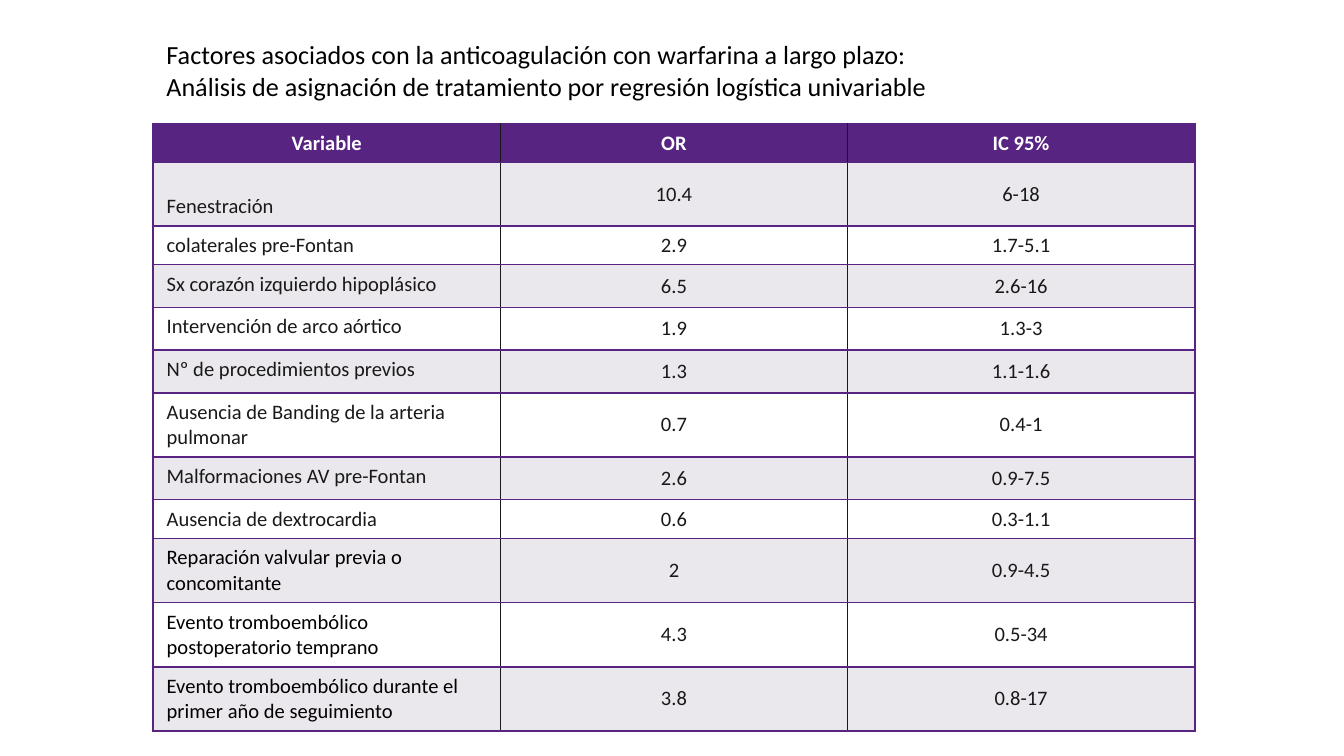
import pptx
import pptx.dml.color
import pptx.enum.text
import pptx.oxml.ns
import pptx.util
from lxml import etree

Pt = pptx.util.Pt
RGBColor = pptx.dml.color.RGBColor
ALIGN = pptx.enum.text.PP_ALIGN
ANCHOR = pptx.enum.text.MSO_ANCHOR

PURPLE = RGBColor(0x58, 0x24, 0x81)
LILAC = RGBColor(0xEA, 0xE8, 0xED)
WHITE = RGBColor(0xFF, 0xFF, 0xFF)
INK = RGBColor(0x19, 0x19, 0x19)
BLACK = RGBColor(0x00, 0x00, 0x00)

TITLE_FORMAT = {"name": "Calibri", "size": Pt(14), "color": BLACK}
HEADER_FORMAT = {"name": "Calibri", "size": Pt(11), "bold": True, "color": WHITE}
BODY_FORMAT = {"name": "Calibri", "size": Pt(11), "bold": False, "color": INK}
EVENT_FORMAT = {**BODY_FORMAT, "color": BLACK}

TITLE = [
    "Factores asociados con la anticoagulación con warfarina a largo plazo:",
    "Análisis de asignación de tratamiento por regresión logística univariable",
]
LEFT = 82.1
COLUMN_WIDTH = 186
TIGHT, NORMAL, TALL = 20.5, 22.9, 33.9
HEADER = ["Variable", "OR", "IC 95%"]

# Row height, format of the variable name, then the three cell texts
FACTORS = [
    (TALL, BODY_FORMAT, "Fenestración", "10.4", "6-18"),
    (TIGHT, BODY_FORMAT, "colaterales pre-Fontan", "2.9", "1.7-5.1"),
    (NORMAL, BODY_FORMAT, "Sx corazón izquierdo hipoplásico", "6.5", "2.6-16"),
    (NORMAL, BODY_FORMAT, "Intervención de arco aórtico", "1.9", "1.3-3"),
    (NORMAL, BODY_FORMAT, "Nº de procedimientos previos", "1.3", "1.1-1.6"),
    (TALL, BODY_FORMAT, "Ausencia de Banding de la arteria pulmonar", "0.7", "0.4-1"),
    (NORMAL, BODY_FORMAT, "Malformaciones AV pre-Fontan", "2.6", "0.9-7.5"),
    (TIGHT, BODY_FORMAT, "Ausencia de dextrocardia", "0.6", "0.3-1.1"),
    (TALL, EVENT_FORMAT, "Reparación valvular previa o concomitante", "2", "0.9-4.5"),
    (TALL, EVENT_FORMAT, "Evento tromboembólico postoperatorio temprano", "4.3", "0.5-34"),
    (TALL, EVENT_FORMAT, "Evento tromboembólico durante el primer año de seguimiento",
     "3.8", "0.8-17"),
]


def write(para, text, formats):
    span = para.add_run()
    span.text = text
    for name, value in formats.items():
        if name == "color":
            span.font.color.rgb = value
        else:
            setattr(span.font, name, value)


def add_title(page):
    box = page.shapes.add_textbox(Pt(LEFT), Pt(17.3), Pt(590), Pt(41))
    frame = box.text_frame
    frame.word_wrap = True
    frame.auto_size = pptx.enum.text.MSO_AUTO_SIZE.SHAPE_TO_FIT_TEXT
    for index, line in enumerate(TITLE):
        para = frame.paragraphs[0] if index == 0 else frame.add_paragraph()
        write(para, line, TITLE_FORMAT)


def set_borders(cell, column):
    """Purple rules around the table and between rows, dark ones between columns."""
    colors = {
        "lnL": PURPLE if column == 0 else INK,
        "lnR": PURPLE if column == len(HEADER) - 1 else INK,
        "lnT": PURPLE,
        "lnB": PURPLE,
    }
    qn = pptx.oxml.ns.qn
    properties = cell._tc.get_or_add_tcPr()
    for side, color in colors.items():
        line = etree.SubElement(properties, qn("a:" + side), w=str(Pt(1)))
        fill = etree.SubElement(line, qn("a:solidFill"))
        etree.SubElement(fill, qn("a:srgbClr"), val=str(color))


def fill_cell(cell, column, text, formats, color, align, anchor):
    set_borders(cell, column)
    cell.fill.solid()
    cell.fill.fore_color.rgb = color
    cell.vertical_anchor = anchor
    para = cell.text_frame.paragraphs[0]
    para.alignment = align
    write(para, text, formats)


def add_factor_table(page):
    heights = [TIGHT] + [factor[0] for factor in FACTORS]
    table = page.shapes.add_table(
        len(heights), len(HEADER), Pt(LEFT), Pt(66.3),
        Pt(COLUMN_WIDTH * len(HEADER)), Pt(sum(heights))).table
    for column in table.columns:
        column.width = Pt(COLUMN_WIDTH)
    for row, height in zip(table.rows, heights):
        row.height = Pt(height)

    # Header row
    for column, text in enumerate(HEADER):
        fill_cell(table.cell(0, column), column, text, HEADER_FORMAT,
                  PURPLE, ALIGN.CENTER, ANCHOR.MIDDLE)

    # Factor rows, in alternating bands
    for row, (_, name_format, name, *values) in enumerate(FACTORS, start=1):
        color = LILAC if row % 2 else WHITE
        name_anchor = ANCHOR.BOTTOM if row == 1 else ANCHOR.TOP
        fill_cell(table.cell(row, 0), 0, name, name_format,
                  color, ALIGN.LEFT, name_anchor)
        for column, value in enumerate(values, start=1):
            fill_cell(table.cell(row, column), column, value, BODY_FORMAT,
                      color, ALIGN.CENTER, ANCHOR.MIDDLE)


def main():
    deck = pptx.Presentation()
    deck.slide_width, deck.slide_height = Pt(720), Pt(405)
    page = deck.slides.add_slide(deck.slide_layouts[6])
    add_factor_table(page)
    add_title(page)
    deck.save("out.pptx")


if __name__ == "__main__":
    main()
